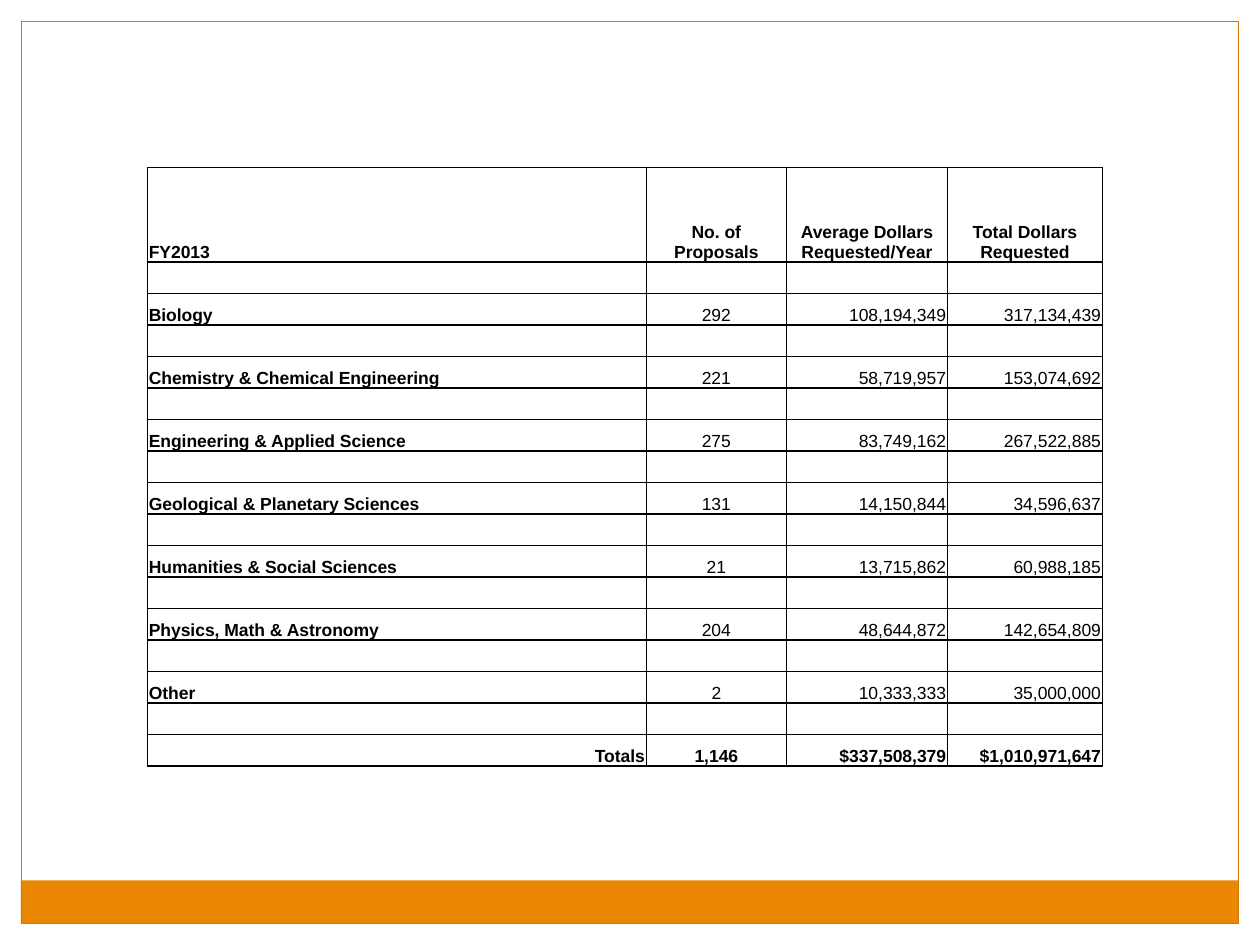
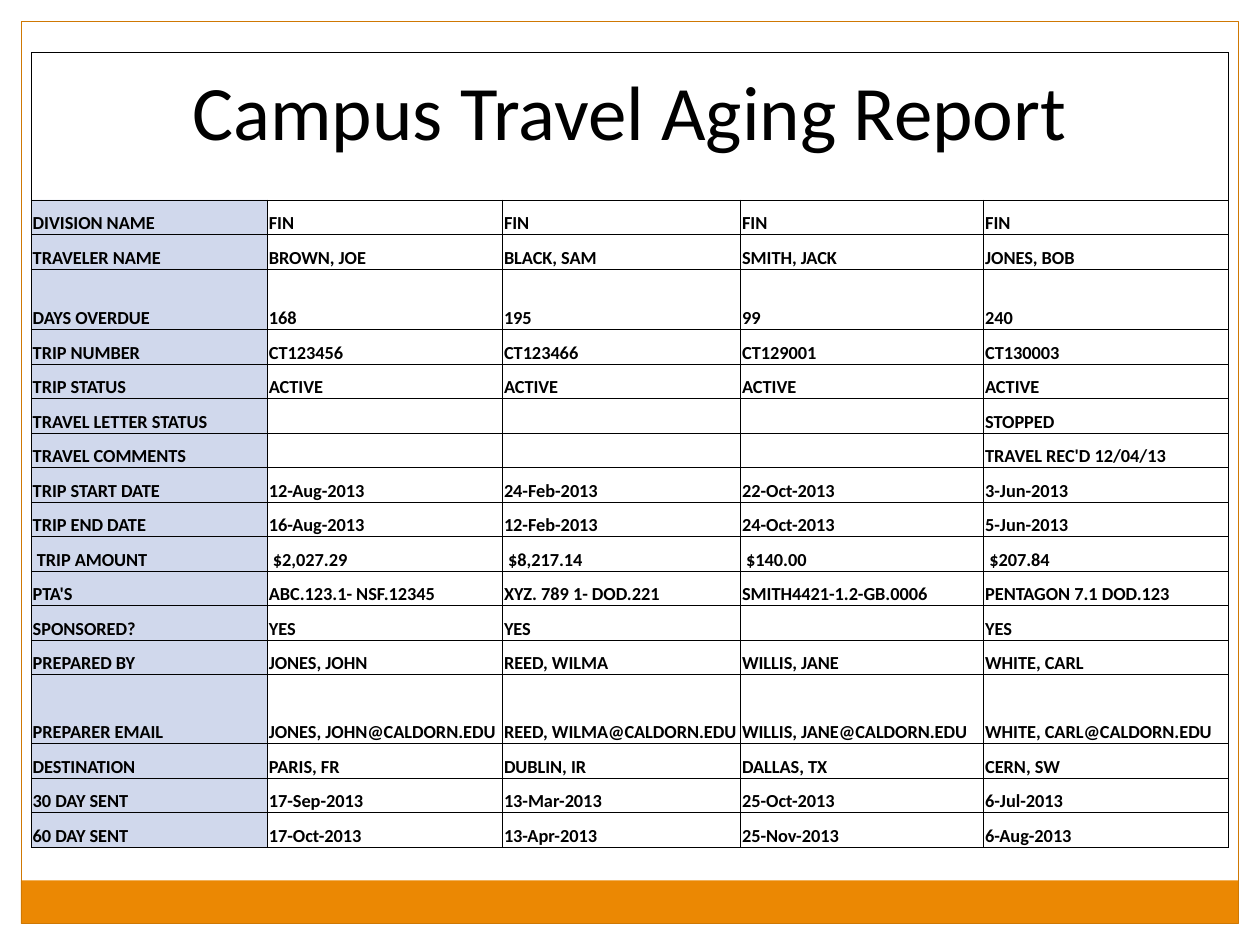
from lxml import etree
from pptx import Presentation
from pptx.dml.color import RGBColor
from pptx.enum.shapes import MSO_SHAPE
from pptx.enum.text import MSO_ANCHOR, PP_ALIGN
from pptx.oxml.ns import qn
from pptx.util import Cm, Pt

RECTANGLE = MSO_SHAPE.RECTANGLE
BOTTOM = MSO_ANCHOR.BOTTOM
LEFT, CENTER, RIGHT = PP_ALIGN.LEFT, PP_ALIGN.CENTER, PP_ALIGN.RIGHT

WHITE = RGBColor(0xFF, 0xFF, 0xFF)
BLACK = RGBColor(0x00, 0x00, 0x00)
ORANGE = RGBColor(0xEB, 0x88, 0x03)
DARK_ORANGE = RGBColor(0xCF, 0x78, 0x03)
LABEL_BLUE = RGBColor(0xAB, 0xB9, 0xDE)

# left, top, width, height in cm, fill, line
FRAME = [
    (0, 0, 25.4, 0.43, WHITE, None),
    (24.97, 0, 0.43, 19.05, WHITE, None),
    (0, 0, 0.43, 19.05, WHITE, None),
    (0.42, 17.75, 24.54, 0.87, ORANGE, None),
    (0.43, 0.43, 24.54, 18.19, None, DARK_ORANGE),
]


def write_cell(cell, text, size, font, bold, align, border):
    """Fill in one cell with bottom-anchored text and a black border on all sides."""
    margins = {"margin_left": 0.03, "margin_right": 0.03, "margin_top": 0.03, "margin_bottom": 0}
    for side, length in margins.items():
        setattr(cell, side, Cm(length))
    cell.vertical_anchor = BOTTOM
    properties = cell._tc.get_or_add_tcPr()
    for edge in ("a:lnL", "a:lnR", "a:lnT", "a:lnB"):
        line = etree.SubElement(properties, qn(edge), w=str(Pt(border)))
        solid = etree.SubElement(line, qn("a:solidFill"))
        etree.SubElement(solid, qn("a:srgbClr"), val=str(BLACK))
    cell.fill.background()

    paragraph = cell.text_frame.paragraphs[0]
    paragraph.alignment = align
    if not text:
        etree.SubElement(paragraph._p, qn("a:endParaRPr"), sz=str(int(size * 100)))
        return
    run = paragraph.add_run()
    run.text = text
    for name, value in {"size": Pt(size), "name": font, "bold": bold}.items():
        setattr(run.font, name, value)
    run.font.color.rgb = BLACK


def add_grid(slide, left, top, widths, heights):
    """Add an unbanded table whose column widths and row heights are in cm."""
    table = slide.shapes.add_table(len(heights), len(widths), Cm(left), Cm(top),
                                   Cm(sum(widths)), Cm(sum(heights))).table
    table.first_row = table.horz_banding = False
    for column, width in zip(table.columns, widths):
        column.width = Cm(width)
    for row, height in zip(table.rows, heights):
        row.height = Cm(height)
    return table


prs = Presentation()
prs.slide_width, prs.slide_height = Cm(25.4), Cm(19.05)
blank_layout = prs.slide_layouts[6]
proposals_slide = prs.slides.add_slide(blank_layout)
travel_slide = prs.slides.add_slide(blank_layout)

for slide in (proposals_slide, travel_slide):
    for left, top, width, height, fill, line in FRAME:
        band = slide.shapes.add_shape(RECTANGLE, Cm(left), Cm(top), Cm(width), Cm(height))
        band.shadow.inherit = False
        if fill is None:
            band.fill.background()
            band.line.color.rgb = line
            band.line.width = Pt(0.75)
        else:
            band.fill.solid()
            band.fill.fore_color.rgb = fill
            band.line.fill.background()

# Proposals by division
proposals = [
    ("FY2013", "No. of Proposals", "Average Dollars Requested/Year", "Total Dollars Requested"),
    ("Biology", "292", "108,194,349", "317,134,439"),
    ("Chemistry & Chemical Engineering", "221", "58,719,957", "153,074,692"),
    ("Engineering & Applied Science", "275", "83,749,162", "267,522,885"),
    ("Geological & Planetary Sciences", "131", "14,150,844", "34,596,637"),
    ("Humanities & Social Sciences", "21", "13,715,862", "60,988,185"),
    ("Physics, Math & Astronomy", "204", "48,644,872", "142,654,809"),
    ("Other", "2", "10,333,333", "35,000,000"),
    ("Totals", "1,146", "$337,508,379", "$1,010,971,647"),
]
spacer_rows = len(proposals) - 1
row_height = 12.07 / 19  # the header is three rows high
proposal_heights = [3 * row_height] + [row_height] * (2 * spacer_rows)
proposal_table = add_grid(proposals_slide, 2.97, 3.38, [10.06, 2.82, 3.25, 3.12], proposal_heights)

last_row = len(proposal_heights) - 1
for r in range(last_row + 1):
    values = proposals[r // 2] if r % 2 == 0 else ("",) * 4
    if r == 0:
        alignments = (LEFT, CENTER, CENTER, CENTER)
    elif r == last_row:
        alignments = (RIGHT, CENTER, RIGHT, RIGHT)
    else:
        alignments = (LEFT, CENTER, RIGHT, RIGHT)
    for c, (value, align) in enumerate(zip(values, alignments)):
        bold = r in (0, last_row) or c == 0
        write_cell(proposal_table.cell(r, c), value, 10, "Arial", bold, align, 1)

# Travel aging report
trips = [
    ("DIVISION NAME", "FIN", "FIN", "FIN", "FIN"),
    ("TRAVELER NAME", "BROWN, JOE", "BLACK, SAM", "SMITH, JACK", "JONES, BOB"),
    ("DAYS OVERDUE", "168", "195", "99", "240"),
    ("TRIP NUMBER", "CT123456", "CT123466", "CT129001", "CT130003"),
    ("TRIP STATUS", "ACTIVE", "ACTIVE", "ACTIVE", "ACTIVE"),
    ("TRAVEL LETTER STATUS", "", "", "", "STOPPED"),
    ("TRAVEL COMMENTS", "", "", "", "TRAVEL REC'D 12/04/13"),
    ("TRIP START DATE", "12-Aug-2013", "24-Feb-2013", "22-Oct-2013", "3-Jun-2013"),
    ("TRIP END DATE", "16-Aug-2013", "12-Feb-2013", "24-Oct-2013", "5-Jun-2013"),
    (" TRIP AMOUNT", " $2,027.29", " $8,217.14", " $140.00", " $207.84"),
    ("PTA'S", "ABC.123.1- NSF.12345", "XYZ. 789 1- DOD.221", "SMITH4421-1.2-GB.0006",
     "PENTAGON 7.1 DOD.123"),
    ("SPONSORED?", "YES", "YES", "", "YES"),
    ("PREPARED BY", "JONES, JOHN", "REED, WILMA", "WILLIS, JANE", "WHITE, CARL"),
    ("PREPARER EMAIL", "JONES, JOHN@CALDORN.EDU", "REED, WILMA@CALDORN.EDU",
     "WILLIS, JANE@CALDORN.EDU", "WHITE, CARL@CALDORN.EDU"),
    ("DESTINATION", "PARIS, FR", "DUBLIN, IR", "DALLAS, TX", "CERN, SW"),
    ("30 DAY SENT", "17-Sep-2013", "13-Mar-2013", "25-Oct-2013", "6-Jul-2013"),
    ("60 DAY SENT", "17-Oct-2013", "13-Apr-2013", "25-Nov-2013", "6-Aug-2013"),
]
tall_rows = {"DAYS OVERDUE": 1.22, "PREPARER EMAIL": 1.39}
title_height = 2.97
trip_height = (16.03 - title_height - sum(tall_rows.values())) / (len(trips) - len(tall_rows))
travel_heights = [title_height] + [tall_rows.get(trip[0], trip_height) for trip in trips]
travel_table = add_grid(travel_slide, 0.63, 1.06, [4.76, 4.74, 4.8, 4.9, 4.94], travel_heights)

for c in range(5):
    title = "Campus Travel Aging Report" if c == 0 else ""
    write_cell(travel_table.cell(0, c), title, 44, "Calibri", False, CENTER, 0.5)
report_title = travel_table.cell(0, 0)
report_title.merge(travel_table.cell(0, 4))
report_title.margin_bottom = Cm(0.78)

for r, trip in enumerate(trips, start=1):
    for c, value in enumerate(trip):
        write_cell(travel_table.cell(r, c), value, 10.5, "Calibri", True, LEFT, 0.5)
    label = travel_table.cell(r, 0)
    label.fill.solid()
    label.fill.fore_color.rgb = LABEL_BLUE
    label_color = label._tc.tcPr.find(qn("a:solidFill")).find(qn("a:srgbClr"))
    etree.SubElement(label_color, qn("a:alpha"), val="55000")

prs.save("out.pptx")
